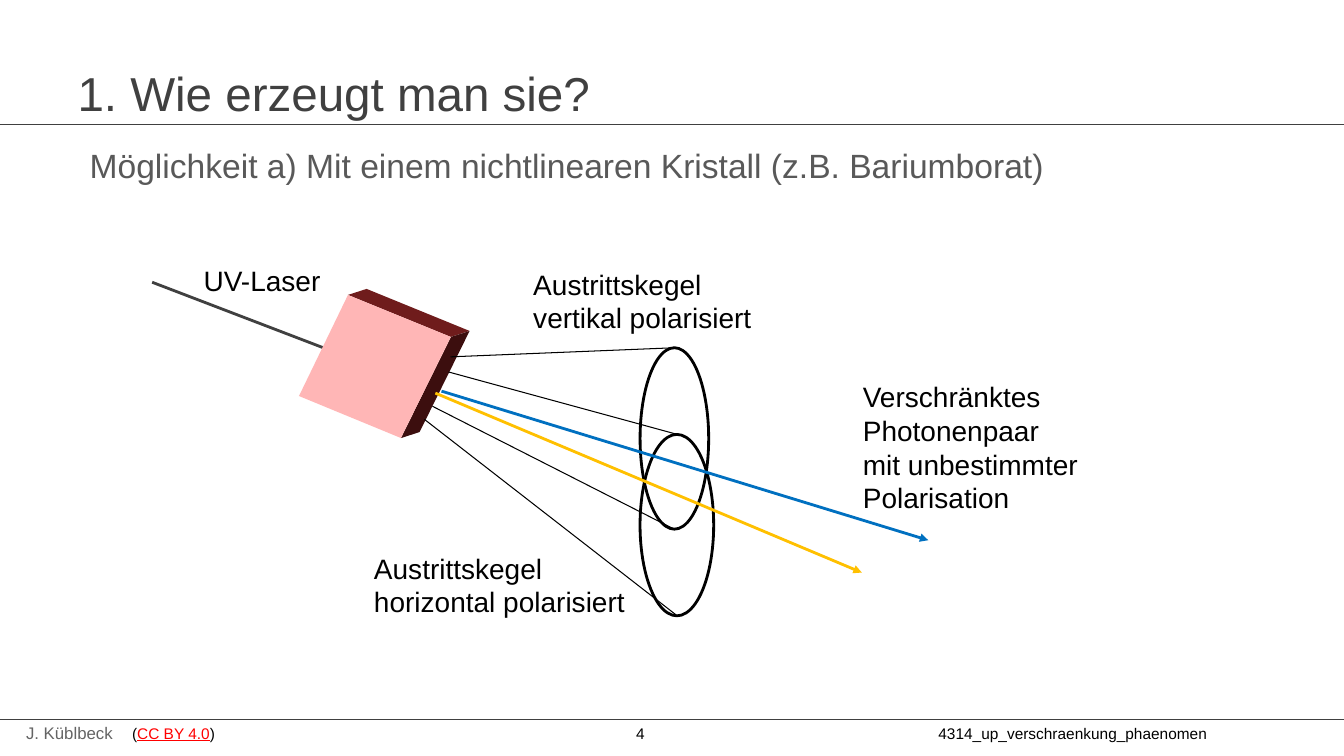
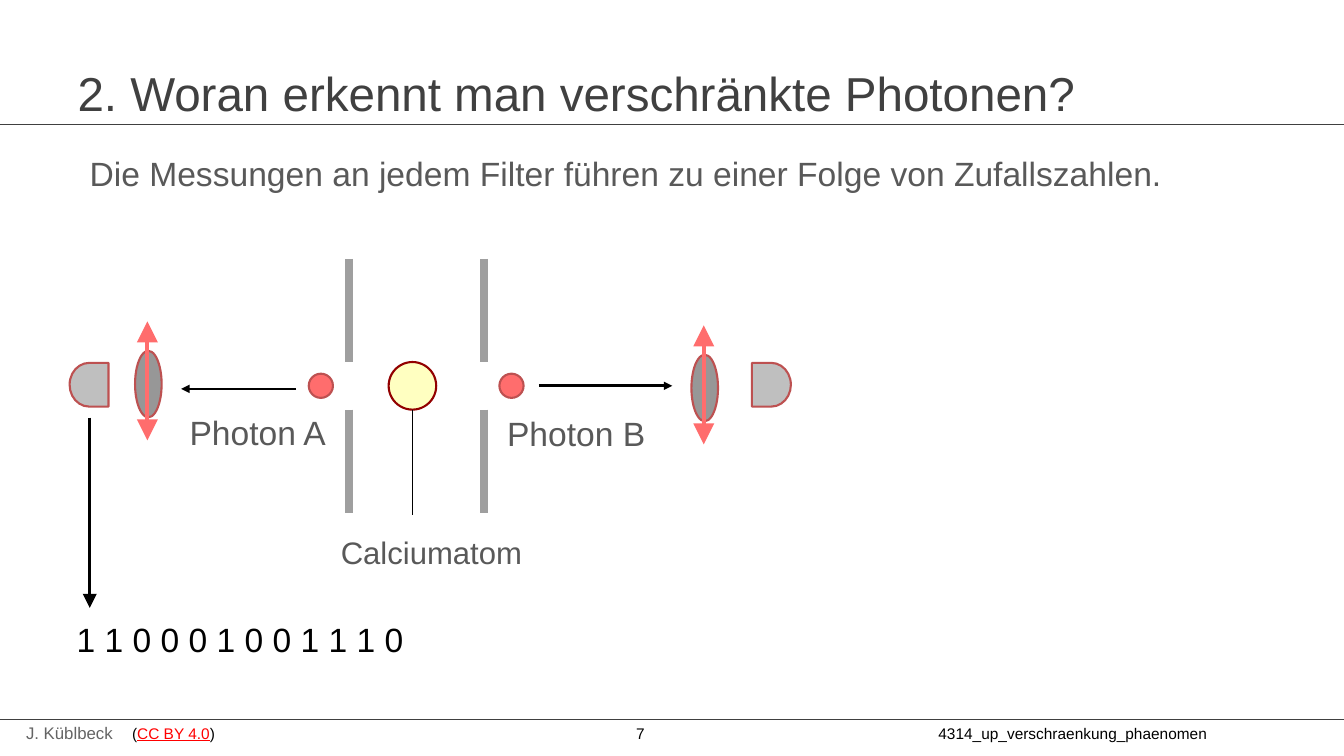
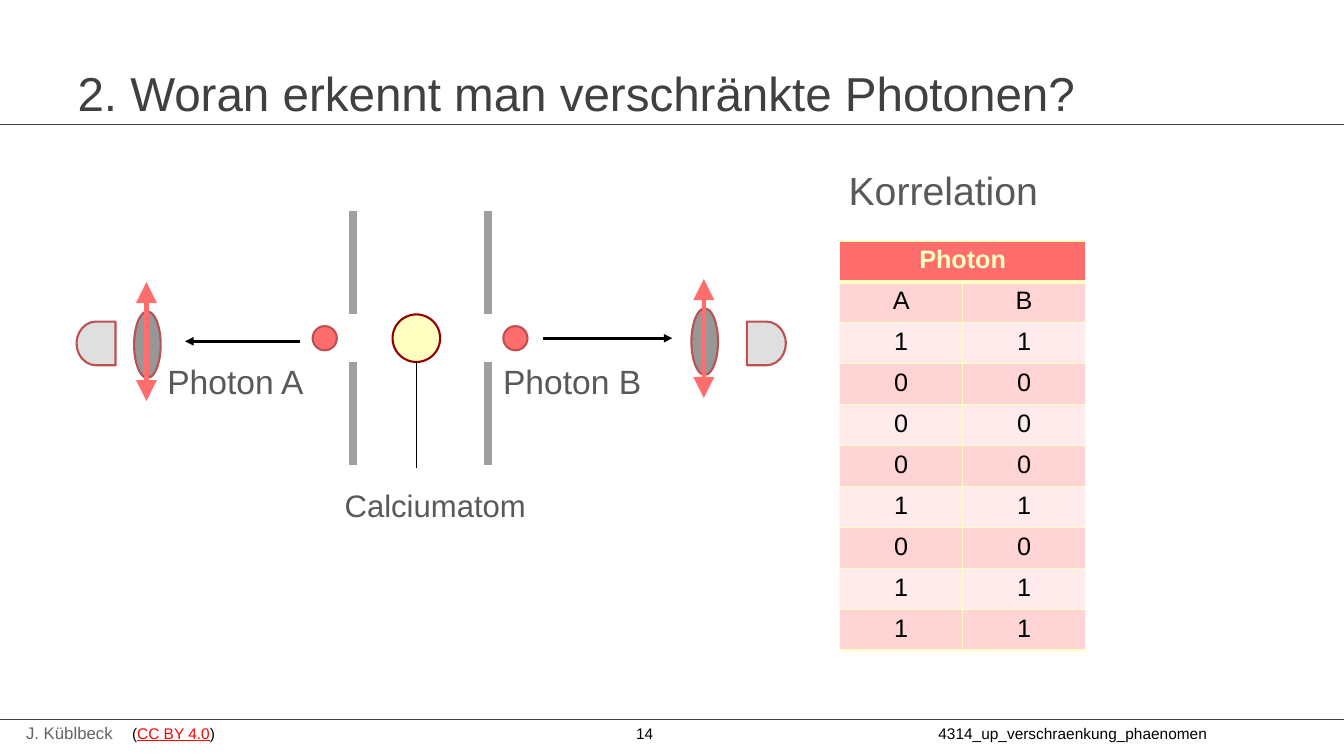
import pptx
import pptx.util
import pptx.dml.color
import pptx.enum.shapes
import pptx.enum.text
import pptx.oxml
import pptx.oxml.ns
import lxml.etree
from dataclasses import dataclass

Pt = pptx.util.Pt
qn = pptx.oxml.ns.qn
SHAPE = pptx.enum.shapes.MSO_SHAPE
ALIGN = pptx.enum.text.PP_ALIGN


@dataclass(frozen=True)
class Theme:
    font: str = "Arial"
    # colours
    black: str = "000000"
    dark: str = "404040"
    grey: str = "595959"
    author: str = "646464"
    link: str = "FF0000"
    red: str = "FF6D6D"
    red_edge: str = "BD5151"
    cream: str = "FFFFC1"
    atom_edge: str = "920000"
    slit: str = "9F9F9F"
    lens: str = "979797"
    blue: str = "0070C0"
    amber: str = "FFC000"
    cube: tuple = ("6F1C1C", "3C0E0E", "FFB6B6")
    bands: tuple = ("FFD4D4", "FFEBEB")
    # type sizes
    title: float = 34
    heading: float = 28
    body: float = 24
    atom: float = 22.2
    label: float = 20
    cell: float = 18
    small: float = 12
    footer: float = 11


T = Theme()

# Content
AUTHOR = "J. Küblbeck"
LICENCE = "CC BY 4.0"
FILE_NAME = "4314_up_verschraenkung_phaenomen"
RULES_Y = (88.6, 514)

CRYSTAL = {
    "number": 4,
    "title": "1. Wie erzeugt man sie?",
    "body": "Möglichkeit a) Mit einem nichtlinearen Kristall (z.B. Bariumborat)",
    "body_box": (48.2, 100, 864, 396),
    "indent": 8.6,
}
CRYSTAL_LABELS = [  # text, left, top, width, height
    ("UV-Laser", 105.8, 185, 267, 68),
    ("Austrittskegel\nvertikal polarisiert", 341.3, 187.2, 267, 68),
    ("Austrittskegel\nhorizontal polarisiert", 227.5, 390.2, 267, 68),
    ("Verschränktes\nPhotonenpaar\nmit unbestimmter Polarisation", 576.7, 267.8, 229, 145),
]
CUBE_FRONT = [(248.6, 210.7), (322.1, 240.7), (286.4, 312.9), (213.6, 282.9)]
CUBE_DEPTH = (13.3, -4.3)
CONES = [(457.2, 248.4, 49, 129.6), (457.2, 310.3, 52.6, 129.6)]
CONE_LINES = [
    (321.8, 254.9, 481.7, 248.4),
    (308.9, 290.2, 481.7, 378),
    (303.1, 299.5, 483.8, 439.9),
    (320.4, 265.7, 483.8, 310.3),
]
PHOTON_RAYS = [
    ((315.4, 279.4, 663.1, 385.9), T.blue),
    ((311, 280.8, 615.6, 409), T.amber),
]

PHOTON_TITLE = "2. Woran erkennt man verschränkte Photonen?"
RANDOM = {
    "number": 7,
    "title": PHOTON_TITLE,
    "body": "Die Messungen an jedem Filter führen zu einer Folge von Zufallszahlen.",
    "body_box": (48.2, 105.8, 864, 396),
    "indent": 8.6,
}
RANDOM_SETUP = {
    "atom": (294.6, 275.6),
    "labels": [("Photon A", 95.8, 290.9), ("Photon B", 322.6, 291.6)],
    "detectors": (49.7, 537.1, 259.2),
    "detector_fill": "BFBFBF",
    "filters": [(96.5, 250.6), (493.9, 253.4)],
}
DIGITS = "1 1 0 0 0 1 0 0 1 1 1 0"

CORRELATION = {
    "number": 14,
    "title": PHOTON_TITLE,
    "body": "Korrelation",
    "body_box": (599, 115.2, 193, 56.9),
    "body_size": T.heading,
}
CORRELATION_SETUP = {
    "atom": (297.4, 241.6),
    "labels": [("Photon A", 79.9, 254.2), ("Photon B", 319.7, 254.2)],
    "detectors": (54.7, 533.5, 229.7),
    "detector_fill": "DFDFDF",
    "filters": [(95.8, 222.5), (493.9, 220.3)],
}
TABLE_HEAD = "Photon"
TABLE_ROWS = ["AB", "11", "00", "00", "00", "11", "00", "11", "11"]


# Helpers
def rgb(value):
    return pptx.dml.color.RGBColor.from_string(value)


def box(*lengths):
    return [Pt(v) for v in lengths]


def style(p, size, color, bold=False):
    for r in p.runs:
        r.font.name = T.font
        r.font.size = Pt(size)
        r.font.bold = bold
        r.font.color.rgb = rgb(color)


def paint(sp, fill, line=None, width=1.5):
    sp.shadow.inherit = False
    if fill:
        sp.fill.solid()
        sp.fill.fore_color.rgb = rgb(fill)
    else:
        sp.fill.background()
    if line:
        sp.line.color.rgb = rgb(line)
        sp.line.width = Pt(width)
    else:
        sp.line.fill.background()


def add_shape(s, kind, at, fill, line, width=1.5):
    sp = s.shapes.add_shape(kind, *box(*at))
    paint(sp, fill, line, width)
    return sp


def add_line(s, ends, color, width, heads=(), head_size="med"):
    """heads holds headEnd (at the start) and/or tailEnd (at the end)."""
    cn = s.shapes.add_connector(pptx.enum.shapes.MSO_CONNECTOR.STRAIGHT, *box(*ends))
    cn.line.color.rgb = rgb(color)
    cn.line.width = Pt(width)
    ln = cn.line._get_or_add_ln()
    for name in heads:
        lxml.etree.SubElement(ln, qn("a:" + name), type="triangle", w=head_size, len=head_size)
    lxml.etree.SubElement(cn._element.spPr, qn("a:effectLst"))


def add_text(s, text, at, size, color, left_margin=39.6):
    tf = s.shapes.add_textbox(*box(*at)).text_frame
    tf.word_wrap = True
    tf.margin_left = Pt(left_margin)
    p = tf.paragraphs[0]
    p.text = text
    p.space_before = Pt(3)
    style(p, size, color)
    return tf


def add_footer(s, number):
    add_text(s, AUTHOR, (11.5, 512.6, 112, 21.6), T.small, T.author, 7.2).paragraphs[0].space_before = Pt(0)
    tf = s.shapes.add_textbox(*box(94.3, 517, 854, 13.7)).text_frame
    tf.word_wrap = True
    tf.margin_left = tf.margin_top = tf.margin_right = tf.margin_bottom = 0
    p = tf.paragraphs[0]
    for text in ("(", LICENCE, f")\t{number}\t{FILE_NAME}"):
        p.add_run().text = text
    style(p, T.footer, T.black)
    p.runs[1].font.color.rgb = rgb(T.link)
    p.runs[1].font.underline = True
    tabs = lxml.etree.SubElement(p._p.get_or_add_pPr(), qn("a:tabLst"))
    for stop in (360, 576):
        lxml.etree.SubElement(tabs, qn("a:tab"), pos=str(Pt(stop)), algn="l")


def new_slide(prs, content):
    s = prs.slides.add_slide(prs.slide_layouts[1])
    add_footer(s, content["number"])
    for y in RULES_Y:
        add_line(s, (0, y, 960, y), T.dark, 0.75)

    title, body = s.placeholders[0], s.placeholders[1]
    title.left, title.top, title.width, title.height = box(48.2, 43.2, 864, 45.4)
    body.left, body.top, body.width, body.height = box(*content["body_box"])
    for sp, text, size, color in (
        (title, content["title"], T.title, T.dark),
        (body, content["body"], content.get("body_size", T.body), T.grey),
    ):
        tf = sp.text_frame
        tf.text = text
        tf.auto_size = pptx.enum.text.MSO_AUTO_SIZE.NONE
        tf.paragraphs[0].alignment = ALIGN.LEFT
        style(tf.paragraphs[0], size, color)
    title.text_frame.vertical_anchor = pptx.enum.text.MSO_ANCHOR.MIDDLE
    p = body.text_frame.paragraphs[0]
    p.space_before = Pt(3)
    pPr = p._p.get_or_add_pPr()
    pPr.set("marL", str(Pt(content.get("indent", 0))))
    pPr.set("indent", "0")
    lxml.etree.SubElement(pPr, qn("a:buNone"))
    return s


# Crystal drawing
def add_cube(s):
    back = [(x + CUBE_DEPTH[0], y + CUBE_DEPTH[1]) for x, y in CUBE_FRONT]
    sides = [[CUBE_FRONT[i], back[i], back[i + 1], CUBE_FRONT[i + 1]] for i in (0, 1)]
    for points, fill in zip(sides + [CUBE_FRONT], T.cube):
        corners = [tuple(box(*pt)) for pt in points]
        fb = s.shapes.build_freeform(*corners[0])
        fb.add_line_segments(corners[1:], close=True)
        paint(fb.convert_to_shape(), fill)


def crystal_slide(prs):
    s = new_slide(prs, CRYSTAL)
    add_line(s, (108.7, 201.6, 274.3, 265), T.dark, 2, ["tailEnd"])
    add_cube(s)
    for at in CONES:
        add_shape(s, SHAPE.OVAL, at, None, T.black, 2)
    for ends in CONE_LINES:
        add_line(s, ends, T.black, 0.75)
    for ends, color in PHOTON_RAYS:
        add_line(s, ends, color, 2, ["tailEnd"])
    for text, *at in CRYSTAL_LABELS:
        add_text(s, text, at, T.label, T.black)


# Two-photon experiment, placed around the centre of the atom
def add_setup(s, setup):
    cx, cy = setup["atom"]

    def disc(x, d, fill, line):
        add_shape(s, SHAPE.OVAL, (x - d / 2, cy - d / 2, d, d), fill, line)

    # Slits, photons and atom
    for x in (cx - 45.4, cx + 51.1):
        for top in (cy - 90.6, cy + 17):
            add_line(s, (x, top, x, top + 73.6), T.slit, 6)
    for x in (cx - 65.4, cx + 70.8):
        disc(x, 17.3, T.red, T.red_edge)
    disc(cx, 34, T.cream, T.atom_edge)
    add_line(s, (cx, cy + 17, cx, cy + 92.4), T.black, 0.75)
    add_line(s, (cx - 83, cy + 2.2, cx - 165.2, cy + 2.2), T.black, 2, ["tailEnd"])
    add_line(s, (cx + 90.4, cy, 480.2, cy), T.black, 2, ["tailEnd"])

    # Labels
    add_text(s, "Calciumatom", (cx - 90.8, cy + 102.2, 181.4, 45.4), T.atom, T.grey)
    for text, x, y in setup["labels"]:
        add_text(s, text, (x, y, 181.4, 45.4), T.body, T.grey)

    # Detectors and polarising filters
    *xs, y = setup["detectors"]
    for x, turn in zip(xs, (180, 0)):
        sp = add_shape(s, SHAPE.FLOWCHART_DELAY, (x, y, 27.8, 31.2), setup["detector_fill"], T.red_edge)
        sp.rotation = turn
    for x, y in setup["filters"]:
        add_shape(s, SHAPE.OVAL, (x, y, 19, 47.5), T.lens, T.red_edge)
        add_line(s, (x + 8.8, y - 21, x + 8.8, y + 64), T.red, 3, ["headEnd", "tailEnd"], "lg")


def random_slide(prs):
    s = new_slide(prs, RANDOM)
    add_setup(s, RANDOM_SETUP)
    add_line(s, (64.1, 298.4, 64.1, 434.2), T.black, 2, ["tailEnd"], "lg")
    add_text(s, DIGITS, (15.1, 438.5, 317.5, 45), T.body, T.black)


# Correlation table
def format_cell(cell, text, fill, color, bold=False, bottom=1):
    cell.text = text
    p = cell.text_frame.paragraphs[0]
    p.alignment = ALIGN.CENTER
    style(p, T.cell, color, bold)
    tcPr = cell._tc.get_or_add_tcPr()
    for side, width in (("L", 1), ("R", 1), ("T", 1), ("B", bottom)):
        ln = lxml.etree.SubElement(tcPr, qn("a:ln" + side), w=str(Pt(width)))
        solid = lxml.etree.SubElement(ln, qn("a:solidFill"))
        lxml.etree.SubElement(solid, qn("a:srgbClr"), val=T.cream)
    cell.fill.solid()
    cell.fill.fore_color.rgb = rgb(fill)


def correlation_slide(prs):
    s = new_slide(prs, CORRELATION)
    rows = len(TABLE_ROWS) + 1
    table = s.shapes.add_table(rows, 2, *box(599.8, 172.1, 175.6, 29.24 * rows)).table
    for row in table.rows:
        row.height = Pt(29.24)
    table.cell(0, 0).merge(table.cell(0, 1))
    for c, text in enumerate((TABLE_HEAD, "")):
        format_cell(table.cell(0, c), text, T.red, T.cream, True, 3)
    for i, values in enumerate(TABLE_ROWS):
        for c, value in enumerate(values):
            format_cell(table.cell(i + 1, c), value, T.bands[i % 2], T.black)
    add_setup(s, CORRELATION_SETUP)


def main():
    prs = pptx.Presentation()
    prs.slide_width, prs.slide_height = Pt(960), Pt(540)
    crystal_slide(prs)
    random_slide(prs)
    correlation_slide(prs)
    prs.save("out.pptx")


if __name__ == "__main__":
    main()
